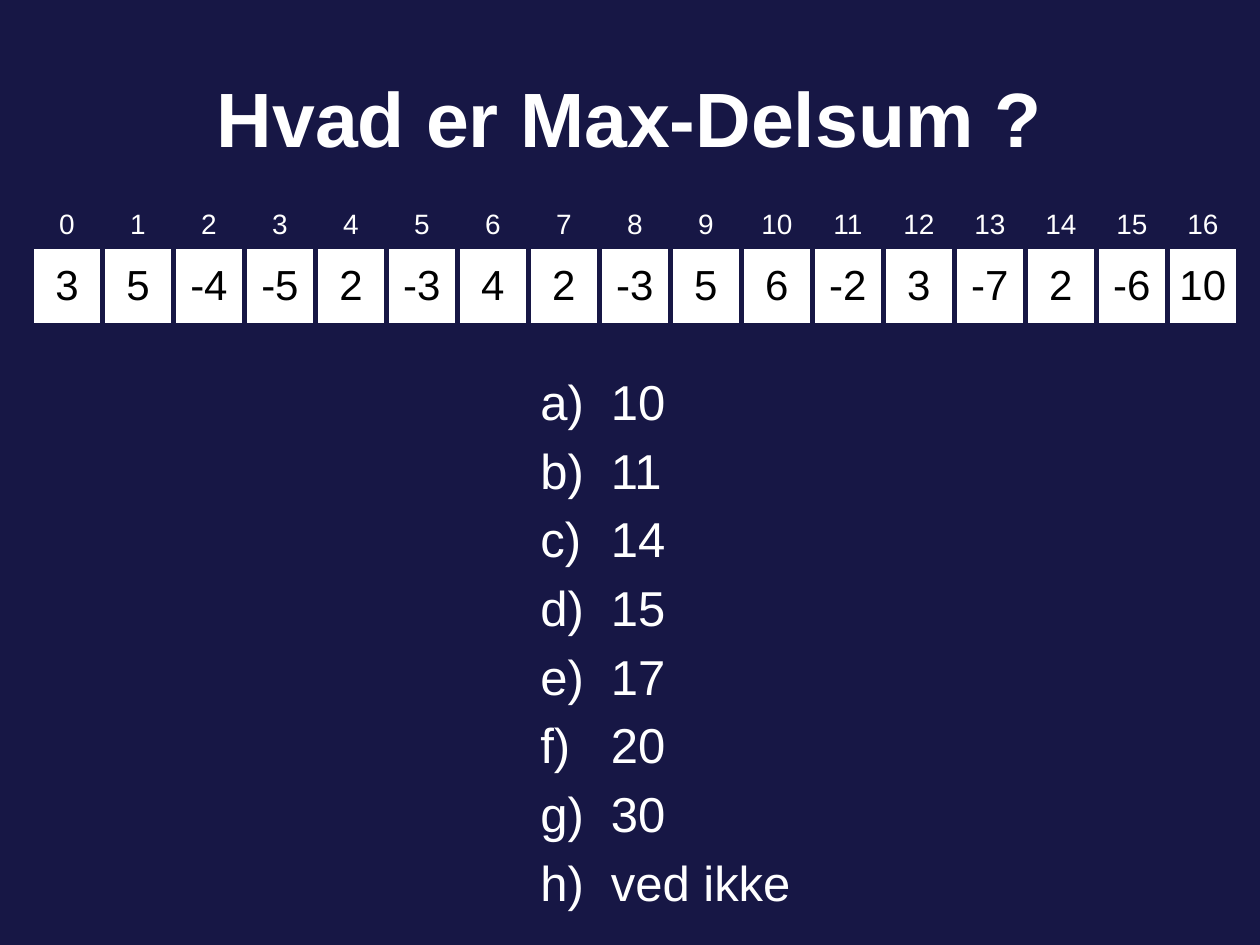
from dataclasses import dataclass

import pptx
import pptx.dml.color
import pptx.enum.text
import pptx.oxml.ns
import pptx.util
from lxml import etree

Inches = pptx.util.Inches
Pt = pptx.util.Pt
RGB = pptx.dml.color.RGBColor.from_string
Anchor = pptx.enum.text.MSO_ANCHOR
Align = pptx.enum.text.PP_ALIGN
qn = pptx.oxml.ns.qn

NUMBERS = [3, 5, -4, -5, 2, -3, 4, 2, -3, 5, 6, -2, 3, -7, 2, -6, 10]
ANSWERS = ["10", "11", "14", "15", "17", "20", "30", "ved ikke"]


@dataclass(frozen=True)
class Theme:
    font: str = "Arial"
    background: str = "171745"
    light: str = "FFFFFF"
    dark: str = "000000"
    title_size: int = 44
    answer_size: int = 28
    number_size: int = 24
    index_size: int = 16
    border_width: int = 3


class SlideBuilder:
    def __init__(self, slide, theme):
        self.slide = slide
        self.theme = theme
        fill = slide.background.fill
        fill.solid()
        fill.fore_color.rgb = RGB(theme.background)

    def add_run(self, paragraph, text, size, color, bold=False):
        run = paragraph.add_run()
        run.text = text
        run.font.name = self.theme.font
        run.font.size = Pt(size)
        run.font.bold = bold
        run.font.color.rgb = RGB(color)

    def text_frame(self, left, top, width, height, anchor):
        box = self.slide.shapes.add_textbox(
            Inches(left), Inches(top), Inches(width), Inches(height))
        frame = box.text_frame
        frame.word_wrap = True
        frame.vertical_anchor = anchor
        return frame

    def title(self, text, *place):
        heading = self.text_frame(*place, Anchor.MIDDLE).paragraphs[0]
        heading.alignment = Align.CENTER
        self.add_run(heading, text, self.theme.title_size, self.theme.light, bold=True)

    def lettered_list(self, answers, *place, indent=0.56):
        frame = self.text_frame(*place, Anchor.TOP)
        for i, answer in enumerate(answers):
            line = frame.paragraphs[0] if i == 0 else frame.add_paragraph()
            props = line._p.get_or_add_pPr()
            props.set("marL", str(Inches(indent)))
            props.set("indent", str(-Inches(indent)))
            spacing = etree.SubElement(props, qn("a:spcBef"))
            etree.SubElement(spacing, qn("a:spcPct"), val="20000")
            etree.SubElement(props, qn("a:buFont"), typeface=self.theme.font)
            etree.SubElement(props, qn("a:buAutoNum"), type="alphaLcParenR")
            self.add_run(line, answer, self.theme.answer_size, self.theme.light)

    def border(self, cell):
        props = cell._tc.get_or_add_tcPr()
        for i, side in enumerate(("lnL", "lnR", "lnT", "lnB")):
            edge = etree.Element(qn(f"a:{side}"), w=str(Pt(self.theme.border_width)))
            fill = etree.SubElement(edge, qn("a:solidFill"))
            etree.SubElement(fill, qn("a:srgbClr"), val=self.theme.background)
            props.insert(i, edge)

    def cell_text(self, cell, text, size, color, anchor):
        cell.vertical_anchor = anchor
        paragraph = cell.text_frame.paragraphs[0]
        paragraph.alignment = Align.CENTER
        self.add_run(paragraph, text, size, color)
        self.border(cell)

    def indexed_array(self, numbers, left, top, width, height):
        """Draw the numbers as a row of boxes with their indices above."""
        theme = self.theme
        table = self.slide.shapes.add_table(
            2, len(numbers), Inches(left), Inches(top),
            Inches(width), Inches(height)).table
        table.first_row = False
        table.horz_banding = False
        for column in table.columns:
            column.width = Inches(width / len(numbers))
        for i, number in enumerate(numbers):
            index_cell, number_cell = table.cell(0, i), table.cell(1, i)
            index_cell.fill.background()
            self.cell_text(index_cell, str(i), theme.index_size, theme.light, Anchor.BOTTOM)
            number_cell.fill.solid()
            number_cell.fill.fore_color.rgb = RGB(theme.light)
            number_cell.margin_left = number_cell.margin_right = 0
            number_cell.margin_top = number_cell.margin_bottom = 0
            self.cell_text(number_cell, str(number), theme.number_size, theme.dark, Anchor.MIDDLE)


def main():
    deck = pptx.Presentation()
    deck.slide_width = Inches(10)
    deck.slide_height = Inches(7.5)
    builder = SlideBuilder(deck.slides.add_slide(deck.slide_layouts[6]), Theme())
    builder.title("Hvad er Max-Delsum ?", 0, 0.3, 10, 1.25)
    builder.lettered_list(ANSWERS, 4.19, 2.9, 3.89, 4.75)
    builder.indexed_array(NUMBERS, 0.25, 1.33, 9.58, 1.25)
    deck.save("out.pptx")


if __name__ == "__main__":
    main()
